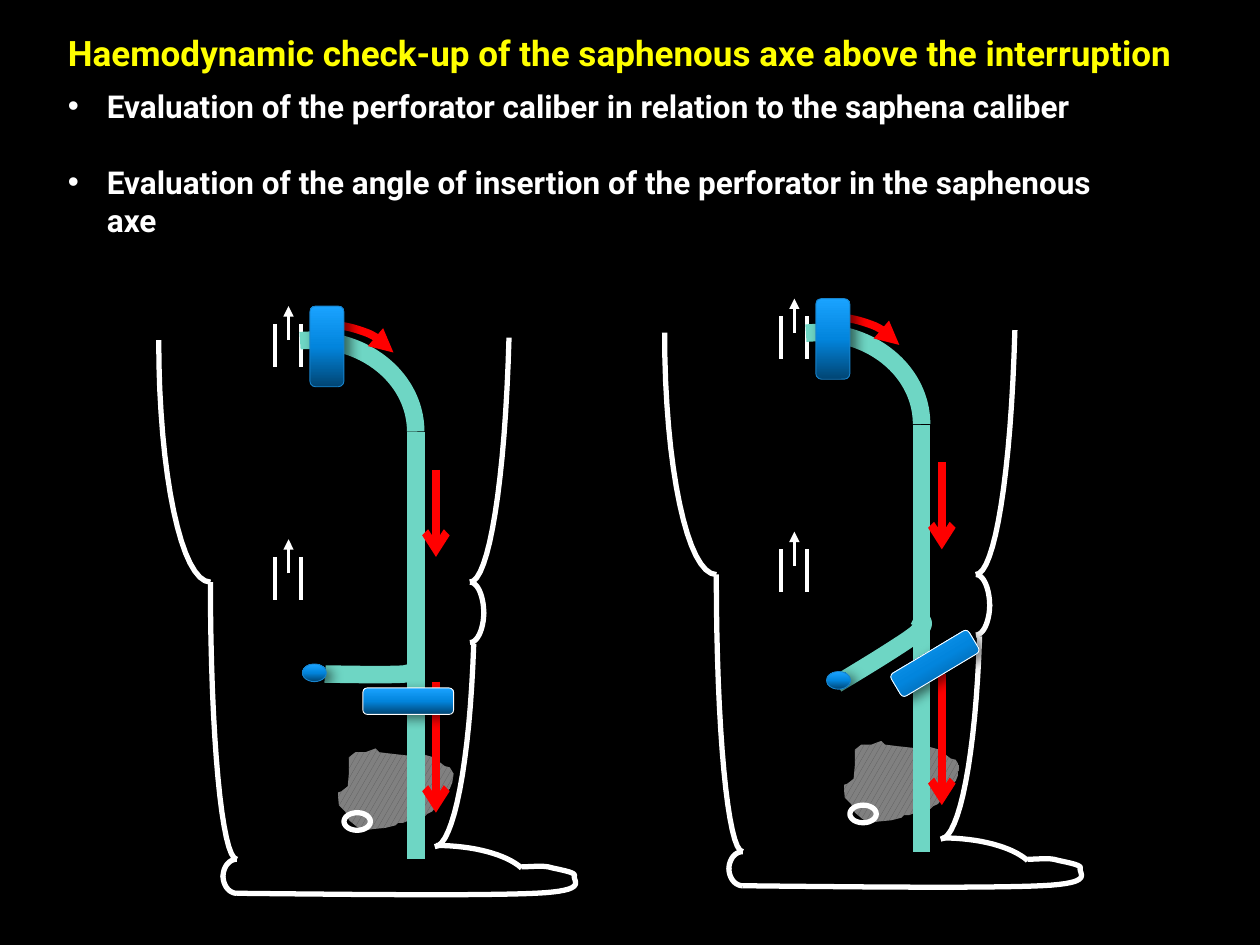
from copy import deepcopy

from lxml import etree
from pptx import Presentation
from pptx.dml.color import RGBColor
from pptx.enum import dml, shapes
from pptx.oxml.ns import qn
from pptx.util import Inches, Pt

FONT = "Roboto"
WHITE, YELLOW, RED, TUBE, EDGE = "FFFFFF", "FFFF00", "FF0000", "6ED6C4", "1884CD"
BLUES = [(0, "014573"), (0.5, "0285DD"), (1, "1AA3FF")]

TITLE = "Haemodynamic check-up of the saphenous axe above the interruption"
POINTS = [
    "Evaluation of the perforator caliber in relation to the saphena caliber",
    "Evaluation of the angle of insertion of the perforator in the saphenous axe",
]

# Every part below is placed for the left leg; the right leg is shifted.
LEG_SHIFTS = [(0, 0), (4.015, -0.06)]

ULCER = [
    (2.82, 5.97), (2.77, 6.01), (2.77, 6.13), (2.76, 6.24), (2.71, 6.28),
    (2.68, 6.29), (2.69, 6.39), (2.74, 6.44), (2.77, 6.51), (2.83, 6.56),
    (2.86, 6.58), (2.89, 6.59), (2.96, 6.58), (3.06, 6.57), (3.14, 6.55),
    (3.16, 6.53), (3.2, 6.53), (3.25, 6.51), (3.28, 6.49), (3.33, 6.48),
    (3.37, 6.48), (3.39, 6.46), (3.43, 6.44), (3.47, 6.39), (3.51, 6.33),
    (3.52, 6.3), (3.57, 6.26), (3.59, 6.21), (3.6, 6.14), (3.57, 6.09),
    (3.53, 6.08), (3.44, 6.01), (3.37, 5.99), (3.27, 6), (3.18, 5.99),
    (3.09, 5.98), (3.01, 5.97), (2.98, 5.94), (2.9, 5.97),
]

# Bezier chains: a start point, then three points for each curve
LEG_OUTLINE = [
    [(3.73, 4.62), (3.88, 4.62), (4.01, 3.81), (4.04, 2.68)],
    [(3.45, 6.72), (3.6, 6.72), (3.73, 6.04), (3.76, 5.11)],
    [(3.73, 4.62), (3.79, 4.62), (3.84, 4.73), (3.84, 4.87)],
    [(3.73, 5.1), (3.79, 5.1), (3.84, 4.99), (3.84, 4.86)],
    [(3.46, 6.71), (3.75, 6.71), (4.02, 6.78), (4.14, 6.89)],
    [(1.88, 7.09), (2.84, 7.1), (3.8, 7.11), (4.25, 7.09),
     (4.69, 7.07), (4.54, 6.99), (4.56, 6.95),
     (4.57, 6.92), (4.42, 6.9), (4.35, 6.88),
     (4.28, 6.87), (4.21, 6.88), (4.14, 6.88)],
    [(1.88, 6.82), (1.76, 6.82), (1.67, 5.83), (1.67, 4.62)],
    [(1.67, 4.62), (1.44, 4.62), (1.26, 3.76), (1.26, 2.7)],
    [(1.88, 6.82), (1.82, 6.82), (1.77, 6.88), (1.77, 6.96)],
    [(1.88, 7.09), (1.82, 7.09), (1.77, 7.03), (1.77, 6.95)],
]
MALLEOLUS = (2.73, 6.45, 0.21, 0.14)
DEEP_VEIN_TOPS = [4.42, 2.57]
SAPHENA_ARCH = ((1.64, 2.7, 1.66, 1.45), (157.815, 0))
SAPHENA_TRUNK = ((3.3, 3.43), (3.3, 6.82))
ARCH_FLOW = ((1.88, 2.57, 1.29, 0.73), (162, 208.246))
TRUNK_FLOWS = [((3.46, 3.73), (3.46, 4.42)), ((3.46, 5.41), (3.46, 6.45))]
GROIN_CLAMP = (2.46, 2.43, 0.27, 0.64)

# What differs between the legs, at its final place on the slide
PERFORATORS = [
    {"vein": [(3.27, 5.27), (3.29, 5.3), (3.32, 5.33), (3.21, 5.35),
              (3.09, 5.36), (2.58, 5.35), (2.58, 5.35)],
     "end": (2.4, 5.27, 0.19, 0.14), "clamp": (2.88, 5.46, 0.72, 0.21), "turn": 0},
    {"vein": [(7.26, 4.89), (7.32, 4.92), (7.37, 4.94), (7.27, 5.03),
              (7.16, 5.12), (6.64, 5.43), (6.64, 5.43)],
     "end": (6.56, 5.33, 0.19, 0.14), "clamp": (7.06, 5.16, 0.72, 0.21), "turn": 329.1},
]


def rgb(value):
    return RGBColor.from_string(value)


def set_line(s, color, width, tail=None):
    s.line.color.rgb = rgb(color)
    s.line.width = Pt(width)
    if tail:
        ln = s._element.spPr.find(qn("a:ln"))
        etree.SubElement(ln, qn("a:tailEnd"), type=tail)


def add_line(slide, start, end, color, width, tail=None):
    ends = [Inches(v) for v in (*start, *end)]
    s = slide.shapes.add_connector(shapes.MSO_CONNECTOR.STRAIGHT, *ends)
    set_line(s, color, width, tail)
    etree.SubElement(s._element.spPr, qn("a:effectLst"))


def add_preset(slide, kind, box, color, width, tail=None):
    s = slide.shapes.add_shape(kind, *[Inches(v) for v in box])
    s.shadow.inherit = False
    s.fill.background()
    set_line(s, color, width, tail)
    return s


def add_arc(slide, box, angles, color, width, tail=None):
    s = add_preset(slide, shapes.MSO_SHAPE.ARC, box, color, width, tail)
    s.adjustments[0], s.adjustments[1] = angles


def add_blue(slide, kind, box, edge=EDGE):
    """Preset shape with the blue gradient and a soft shadow."""
    s = add_preset(slide, kind, box, edge, 0.5)
    s.fill.gradient()
    s.fill.gradient_angle = 90
    stops = s._element.spPr.find(".//" + qn("a:gsLst"))
    stops.append(deepcopy(stops[0]))
    for stop, (position, color) in zip(s.fill.gradient_stops, BLUES):
        stop.position = position
        stop.color.rgb = rgb(color)
    effects = s._element.spPr.find(qn("a:effectLst"))
    shadow = etree.SubElement(effects, qn("a:outerShdw"), blurRad=str(Pt(7)),
                              dist=str(Pt(4)), dir=str(35 * 60000), rotWithShape="0")
    black = etree.SubElement(shadow, qn("a:srgbClr"), val="000000")
    etree.SubElement(black, qn("a:alpha"), val="55000")
    return s


def add_outline(slide, points, closed=False):
    points = [(Inches(x), Inches(y)) for x, y in points]
    builder = slide.shapes.build_freeform(*points[0])
    builder.add_line_segments(points[1:], close=closed)
    s = builder.convert_to_shape()
    s.shadow.inherit = False
    return s


def add_curve(slide, chain, color, width, steps=16):
    points = [chain[0]]
    for i in range(0, len(chain) - 1, 3):
        for k in range(1, steps + 1):
            t = k / steps
            weights = ((1 - t) ** 3, 3 * t * (1 - t) ** 2, 3 * t * t * (1 - t), t ** 3)
            points.append(tuple(sum(w * p[axis] for w, p in zip(weights, chain[i:i + 4]))
                                for axis in (0, 1)))
    s = add_outline(slide, points)
    s.fill.background()
    set_line(s, color, width)


def add_text(slide, box, lines, size, color, bullets=False):
    tf = slide.shapes.add_textbox(*[Inches(v) for v in box]).text_frame
    tf.word_wrap = True
    for i, line in enumerate(lines):
        p = tf.paragraphs[0] if i == 0 else tf.add_paragraph()
        if i:
            p.space_before = Pt(22)
        if bullets:
            pPr = p._p.get_or_add_pPr()
            pPr.set("marL", str(Inches(0.31)))
            pPr.set("indent", str(Inches(-0.31)))
            etree.SubElement(pPr, qn("a:buFont"), typeface="Arial")
            etree.SubElement(pPr, qn("a:buChar"), char="•")
        r = p.add_run()
        r.text = line
        r.font.name, r.font.size, r.font.bold = FONT, Pt(size), True
        r.font.color.rgb = rgb(color)


def add_leg(slide, dx, dy, perforator):
    def move(points):
        return [(x + dx, y + dy) for x, y in points]

    def move_box(box):
        return (box[0] + dx, box[1] + dy, *box[2:])

    ulcer = add_outline(slide, move(ULCER), closed=True)
    ulcer.fill.patterned()
    ulcer.fill.pattern = dml.MSO_PATTERN.LARGE_CONFETTI
    ulcer.fill.fore_color.rgb, ulcer.fill.back_color.rgb = rgb("595959"), rgb("808080")
    ulcer.line.fill.background()
    for chain in LEG_OUTLINE:
        add_curve(slide, move(chain), WHITE, 3)
    add_preset(slide, shapes.MSO_SHAPE.OVAL, move_box(MALLEOLUS), WHITE, 3)
    for top in DEEP_VEIN_TOPS:
        for x in (2.18, 2.39):
            add_line(slide, *move([(x, top), (x, top + 0.34)]), WHITE, 2.25)
        add_line(slide, *move([(2.29, top + 0.13), (2.29, top - 0.14)]), WHITE, 1.5, "triangle")

    box, angles = SAPHENA_ARCH
    add_arc(slide, move_box(box), angles, TUBE, 10)
    add_line(slide, *move(SAPHENA_TRUNK), TUBE, 10)
    box, angles = ARCH_FLOW
    add_arc(slide, move_box(box), angles, RED, 4.5, "triangle")
    for flow in TRUNK_FLOWS:
        add_line(slide, *move(flow), RED, 4.5, "arrow")

    add_curve(slide, perforator["vein"], TUBE, 10)
    add_blue(slide, shapes.MSO_SHAPE.OVAL, perforator["end"])
    add_blue(slide, shapes.MSO_SHAPE.ROUNDED_RECTANGLE, move_box(GROIN_CLAMP))
    clamp = add_blue(slide, shapes.MSO_SHAPE.ROUNDED_RECTANGLE, perforator["clamp"], WHITE)
    clamp.rotation = perforator["turn"]


prs = Presentation()
prs.slide_width, prs.slide_height = Inches(10), Inches(7.5)
slide = prs.slides.add_slide(prs.slide_layouts[6])
slide.background.fill.solid()
slide.background.fill.fore_color.rgb = rgb("000000")
add_text(slide, (0.44, 0.64, 8.71, 1.01), POINTS, 18, WHITE, bullets=True)
add_text(slide, (0.44, 0.2, 9.28, 0.44), [TITLE], 20, YELLOW)
for (dx, dy), perforator in zip(LEG_SHIFTS, PERFORATORS):
    add_leg(slide, dx, dy, perforator)
prs.save("out.pptx")
